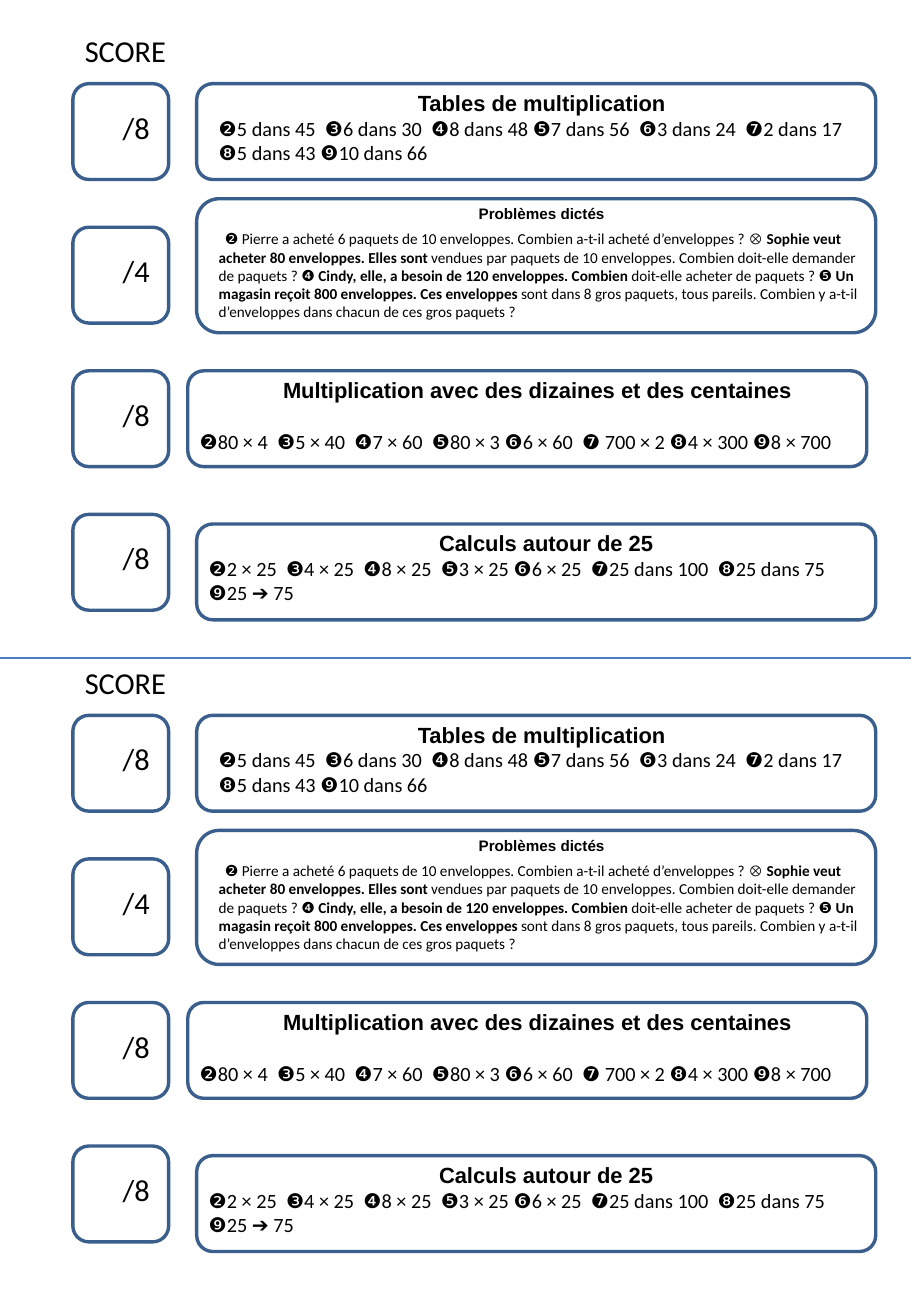
from dataclasses import dataclass
from itertools import groupby

from lxml import etree
from pptx import Presentation
from pptx.dml.color import RGBColor
from pptx.enum.shapes import MSO_CONNECTOR, MSO_SHAPE
from pptx.enum.text import MSO_AUTO_SIZE, PP_ALIGN
from pptx.oxml.ns import qn
from pptx.util import Pt

ROUNDED = MSO_SHAPE.FLOWCHART_ALTERNATE_PROCESS
STRAIGHT = MSO_CONNECTOR.STRAIGHT
GROW = MSO_AUTO_SIZE.SHAPE_TO_FIT_TEXT
CENTER = PP_ALIGN.CENTER

BLACK = RGBColor(0x00, 0x00, 0x00)
FRAME_BLUE = RGBColor(0x3A, 0x5F, 0x8C)
CUT_BLUE = RGBColor(0x4B, 0x7E, 0xBC)

PAGE_W, PAGE_H = 540, 780
SHEET_TOPS = (0, 374.4)
SCORE_LEFT, SCORE_TOP, SCORE_SIDE, SCORE_PITCH = 43.2, 49.6, 56.8, 85.1
CARD_W = 402.5
MARKERS = "❷❸❹❺❻❼❽❾⊗"
BOLD_MARK = "**"


@dataclass
class Exercise:
    title: str
    lines: tuple
    points: int
    left: float
    top: float
    height: float = SCORE_SIDE
    text_shift: float = 0
    text_width: float = 414
    text_height: float = 52
    title_size: int = 13
    body_size: int = 12
    gap: float = 0
    indent: float = 0


EXERCISES = (
    Exercise(
        "Tables de multiplication",
        ("❷5 dans 45  ❸6 dans 30  ❹8 dans 48 ❺7 dans 56  ❻3 dans 24  ❼2 dans 17 "
         "❽5 dans 43 ❾10 dans 66",),
        points=8, left=116.6, top=49.6, text_shift=6, text_width=396.8),
    Exercise(
        "Problèmes dictés",
        ("❷ Pierre a acheté 6 paquets de 10 enveloppes. Combien a-t-il acheté d’enveloppes ? "
         "⊗ **Sophie veut acheter 80 enveloppes. Elles sont **vendues par paquets de 10 "
         "enveloppes. Combien doit-elle demander de paquets ? "
         "❹ **Cindy, elle, a besoin de 120 enveloppes. Combien **doit-elle acheter de paquets ? "
         "❺ **Un magasin reçoit 800 enveloppes. Ces enveloppes **sont dans 8 gros paquets, "
         "tous pareils. Combien y a-t-il d’enveloppes dans chacun de ces gros paquets ?",),
        points=4, left=116.6, top=117.8, height=79.4, text_shift=6, text_width=396.8,
        text_height=88.6, title_size=9, body_size=9, gap=4, indent=3.6),
    Exercise(
        "Multiplication avec des dizaines et des centaines",
        ("❷80 × 4  ❸5 × 40  ❹7 × 60  ❺80 × 3 ❻6 × 60  ❼ 700 × 2 ❽4 × 300 ❾8 × 700",),
        points=8, left=111.3, top=219.8, text_height=53.3, gap=15.5),
    Exercise(
        "Calculs autour de 25",
        ("❷2 × 25  ❸4 × 25  ❹8 × 25  ❺3 × 25 ❻6 × 25  ❼25 dans 100  ❽25 dans 75",
         "❾25 ➔ 75"),
        points=8, left=116.6, top=310.6),
)


def add_frame(slide, left, top, width, height):
    frame = slide.shapes.add_shape(ROUNDED, Pt(left), Pt(top), Pt(width), Pt(height))
    frame.shadow.inherit = False
    frame.fill.background()
    frame.line.color.rgb = FRAME_BLUE
    frame.line.width = Pt(2)


def add_text_frame(slide, left, top, width, height):
    box = slide.shapes.add_textbox(Pt(left), Pt(top), Pt(width), Pt(height))
    box.text_frame.word_wrap = True
    box.text_frame.auto_size = GROW
    return box.text_frame


def style_run(run, font_name, size, bold=False):
    run.font.name = font_name
    run.font.size = Pt(size)
    run.font.bold = bold
    run.font.color.rgb = BLACK


def add_label(slide, label, left, top, width, inset=7.2):
    frame = add_text_frame(slide, left, top, width, 29)
    frame.margin_left = Pt(inset)
    frame.text = label
    style_run(frame.paragraphs[0].runs[0], "Calibri", 18)


def fill_paragraph(paragraph, line, size):
    """Sets number markers in Arial, other words in Calibri, and marked parts in bold."""
    for index, part in enumerate(line.split(BOLD_MARK)):
        for is_marker, chars in groupby(part, key=lambda char: char in MARKERS):
            run = paragraph.add_run()
            run.text = "".join(chars)
            style_run(run, "Arial" if is_marker else "Calibri", size, index % 2 == 1)


def add_score(slide, points, left, top):
    add_frame(slide, left, top, SCORE_SIDE, SCORE_SIDE)
    add_label(slide, f"/{points}", left + 6, top + 11.4, SCORE_SIDE, inset=23.5)


def add_card(slide, exercise, sheet_top):
    top = sheet_top + exercise.top
    add_frame(slide, exercise.left, top, CARD_W, exercise.height)
    frame = add_text_frame(slide, exercise.left + exercise.text_shift, top,
                           exercise.text_width, exercise.text_height)
    heading = frame.paragraphs[0]
    heading.text = exercise.title
    heading.alignment = CENTER
    style_run(heading.runs[0], "Arial", exercise.title_size, bold=True)
    for line in exercise.lines:
        paragraph = frame.add_paragraph()
        paragraph.space_before = Pt(exercise.gap)
        paragraph._p.get_or_add_pPr().set("indent", str(Pt(exercise.indent)))
        fill_paragraph(paragraph, line, exercise.body_size)


def add_sheet(slide, top):
    add_label(slide, "SCORE", SCORE_LEFT, top + 15.8, 96.5)
    for row, exercise in enumerate(EXERCISES):
        add_score(slide, exercise.points, SCORE_LEFT, top + SCORE_TOP + row * SCORE_PITCH)
        add_card(slide, exercise, top)


def add_cut_line(slide, y):
    cut = slide.shapes.add_connector(STRAIGHT, Pt(0), Pt(y), Pt(PAGE_W), Pt(y))
    cut.line.color.rgb = CUT_BLUE
    cut.line.width = Pt(0.75)
    etree.SubElement(cut._element.spPr, qn("a:effectLst"))


def main():
    deck = Presentation()
    deck.slide_width, deck.slide_height = Pt(PAGE_W), Pt(PAGE_H)
    slide = deck.slides.add_slide(deck.slide_layouts[6])
    add_cut_line(slide, PAGE_H / 2)
    for top in SHEET_TOPS:
        add_sheet(slide, top)
    deck.save("out.pptx")


if __name__ == "__main__":
    main()
